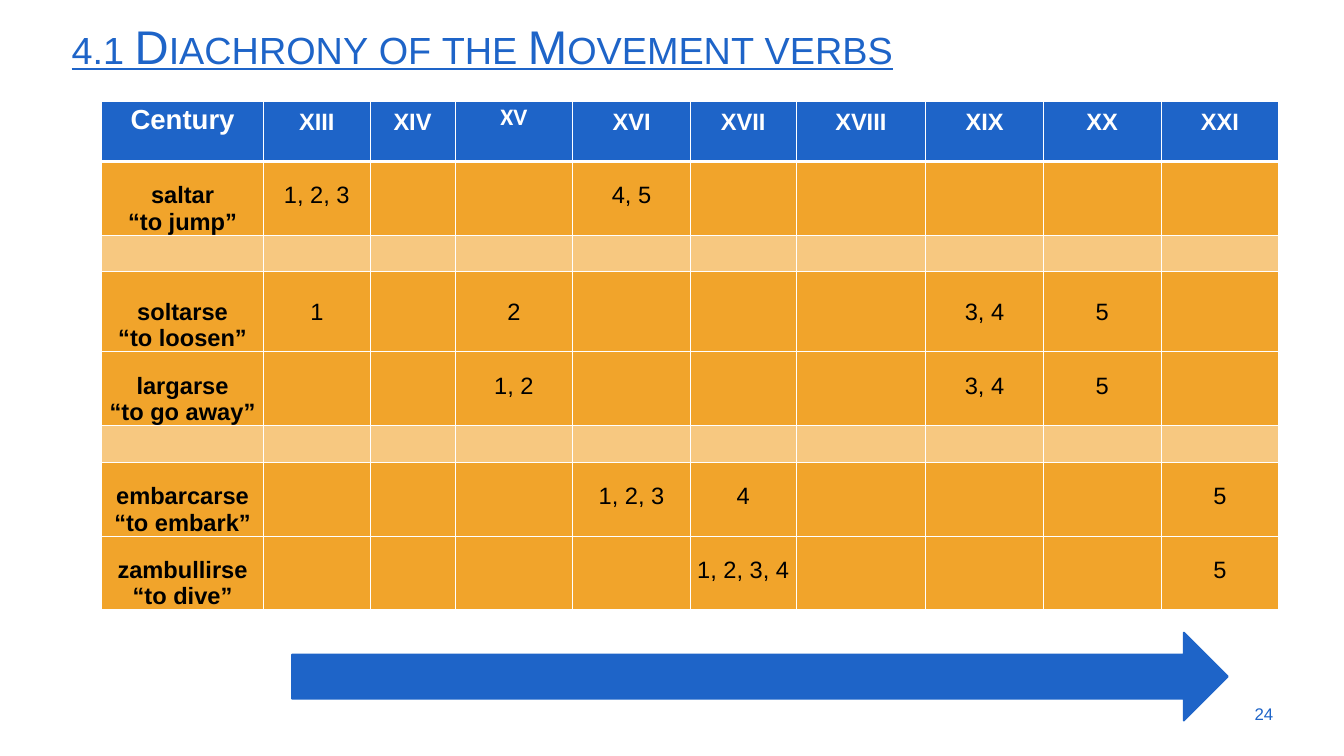
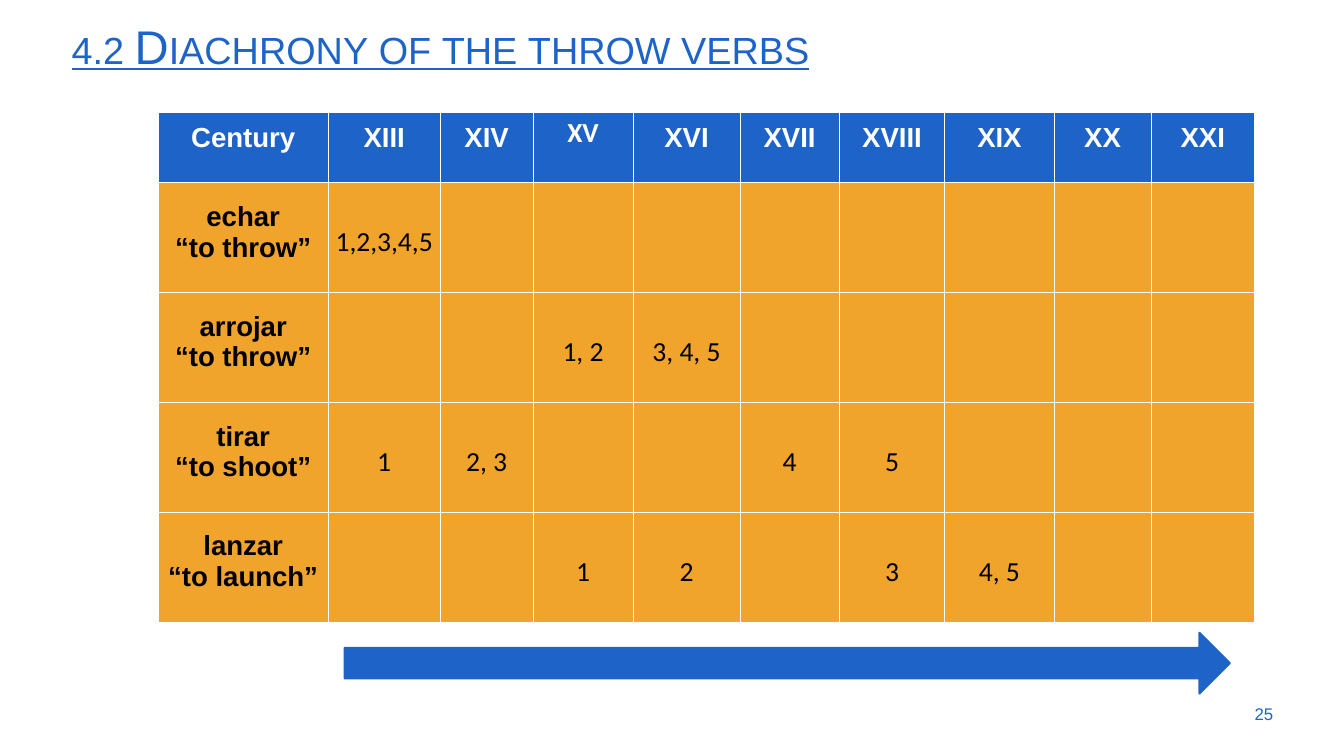
"""Build two slides that chart the senses of Spanish verbs by century."""
from lxml import etree
from pptx import Presentation
from pptx.dml.color import RGBColor
from pptx.enum import shapes, text
from pptx.oxml.ns import qn
from pptx.util import Inches, Pt

COLORS = {"blue": "1E64C8", "orange": "F1A42B", "pale": "F7C880", "white": "FFFFFF", "black": "000000"}
CENTURIES = ["XIII", "XIV", "XV", "XVI", "XVII", "XVIII", "XIX", "XX", "XXI"]
SLIDES = [
    {
        "title": "4.1 Diachrony of the Movement verbs", "title_width": 17.88, "number": "24",
        "arrow": (4.12, 8.93, 13.2, 1.24), "origin": (1.43, 1.43),
        "cols": [2.29, 1.5, 1.2, 1.66, 1.66, 1.49, 1.83, 1.66, 1.66, 1.66],
        "heights": [0.83, 1.04, 0.52, 1.13, 1.04, 0.52, 1.04, 1.04],
        "size": 24, "sense_font": "Arial", "pad": 0.37, "verb_pad": 0, "header_rule": 3,
        "verbs": [
            ("saltar\n“to jump”", {"XIII": "1, 2, 3", "XVI": "4, 5"}),
            ("", {}),
            ("soltarse\n“to loosen”", {"XIII": "1", "XV": "2", "XIX": "3, 4", "XX": "5"}),
            ("largarse\n“to go away”", {"XV": "1, 2", "XIX": "3, 4", "XX": "5"}),
            ("", {}),
            ("embarcarse\n“to embark”", {"XVI": "1, 2, 3", "XVII": "4", "XXI": "5"}),
            ("zambullirse\n“to dive”", {"XVII": "1, 2, 3, 4", "XXI": "5"}),
        ],
    },
    {
        "title": "4.2 Diachrony of the throw verbs", "title_width": 17.18, "number": "25",
        "arrow": (4.86, 8.93, 12.49, 0.86), "origin": (2.23, 1.58),
        "cols": [2.4, 1.58, 1.31, 1.41, 1.51, 1.4, 1.49, 1.54, 1.37, 1.46],
        "heights": [1, 1.55, 1.55, 1.55, 1.55],
        "size": 28, "sense_font": "Calibri", "pad": 0.42, "verb_pad": 0.42, "header_rule": 1,
        "verbs": [
            ("echar\n“to throw”", {"XIII": "1,2,3,4,5"}),
            ("arrojar\n“to throw”", {"XV": "1, 2", "XVI": "3, 4, 5"}),
            ("tirar\n“to shoot”", {"XIII": "1", "XIV": "2, 3", "XVII": "4", "XVIII": "5"}),
            ("lanzar\n“to launch”", {"XV": "1", "XVI": "2", "XVIII": "3", "XIX": "4, 5"}),
        ],
    },
]


def write(tf, content, align, color, **font):
    """Fill a text frame with uniformly formatted paragraphs."""
    tf.text = content
    for p in tf.paragraphs:
        p.alignment = align
        for r in p.runs:
            for key, value in font.items():
                setattr(r.font, key, value)
            r.font.color.rgb = RGBColor.from_string(COLORS[color])


def style_cell(cell, fill, bottom):
    """Give a cell white borders and a solid fill."""
    tcPr = cell._tc.get_or_add_tcPr()
    for side, width in (("L", 1), ("R", 1), ("T", 1), ("B", bottom)):
        ln = etree.SubElement(tcPr, qn(f"a:ln{side}"), w=str(Pt(width)))
        solid = etree.SubElement(ln, qn("a:solidFill"))
        etree.SubElement(solid, qn("a:srgbClr"), val=COLORS["white"])
    cell.fill.solid()
    cell.fill.fore_color.rgb = RGBColor.from_string(COLORS[fill])


prs = Presentation()
prs.slide_width, prs.slide_height = Inches(18.96), Inches(10.67)

for data in SLIDES:
    s = prs.slides.add_slide(prs.slide_layouts[5])

    title = s.shapes.title
    title.left, title.top, title.width, title.height = map(Inches, (0.91, 0.28, data["title_width"], 0.94))
    tf = title.text_frame
    tf.auto_size = text.MSO_AUTO_SIZE.NONE
    tf.vertical_anchor = text.MSO_ANCHOR.TOP
    write(tf, data["title"], text.PP_ALIGN.LEFT, "blue", name="Arial", size=Pt(48), underline=True)
    p = tf.paragraphs[0]
    p.line_spacing = 0.9
    p.runs[0].font._element.set("cap", "small")

    tf = s.shapes.add_textbox(*map(Inches, (17.05, 9.79, 1.01, 0.57))).text_frame
    tf.word_wrap = True
    tf.vertical_anchor = text.MSO_ANCHOR.MIDDLE
    write(tf, data["number"], text.PP_ALIGN.RIGHT, "blue", name="Arial", size=Pt(17.1))

    arrow = s.shapes.add_shape(shapes.MSO_SHAPE.RIGHT_ARROW, *map(Inches, data["arrow"]))
    arrow.shadow.inherit = False
    arrow.fill.solid()
    arrow.fill.fore_color.rgb = arrow.line.color.rgb = RGBColor.from_string(COLORS["blue"])
    arrow.line.width = Pt(2)

    cols, heights = data["cols"], data["heights"]
    frame = s.shapes.add_table(len(heights), len(cols), *map(Inches, (*data["origin"], sum(cols), sum(heights))))
    table = frame.table
    table.first_row = table.horz_banding = False
    for col, width in zip(table.columns, cols):
        col.width = Inches(width)
    for row, height in zip(table.rows, heights):
        row.height = Inches(height)

    rows = [["Century", *CENTURIES]]
    rows += [[verb, *(senses.get(c, "") for c in CENTURIES)] for verb, senses in data["verbs"]]
    for i, row in enumerate(rows):
        header = i == 0
        fill = "blue" if header else "orange" if row[0] else "pale"
        for j, content in enumerate(row):
            cell = table.cell(i, j)
            style_cell(cell, fill, data["header_rule"] if header else 1)
            if not content:
                continue
            name = "Arial"
            if content == "XV":
                name = "Calibri"
            elif not header and j > 0:
                name = data["sense_font"]
            pad = data["verb_pad"] if j == 0 and not header else data["pad"]
            margins = {"left": 0.01, "right": 0.01, "top": 0.01, "bottom": pad + (0.05 if name == "Calibri" else 0)}
            for side, value in margins.items():
                setattr(cell, f"margin_{side}", Inches(value))
            cell.vertical_anchor = text.MSO_ANCHOR.BOTTOM
            write(cell.text_frame, content, text.PP_ALIGN.CENTER, "white" if header else "black", name=name,
                  size=Pt(28 if content == "Century" else data["size"]), bold=header or j == 0)

prs.save("out.pptx")
